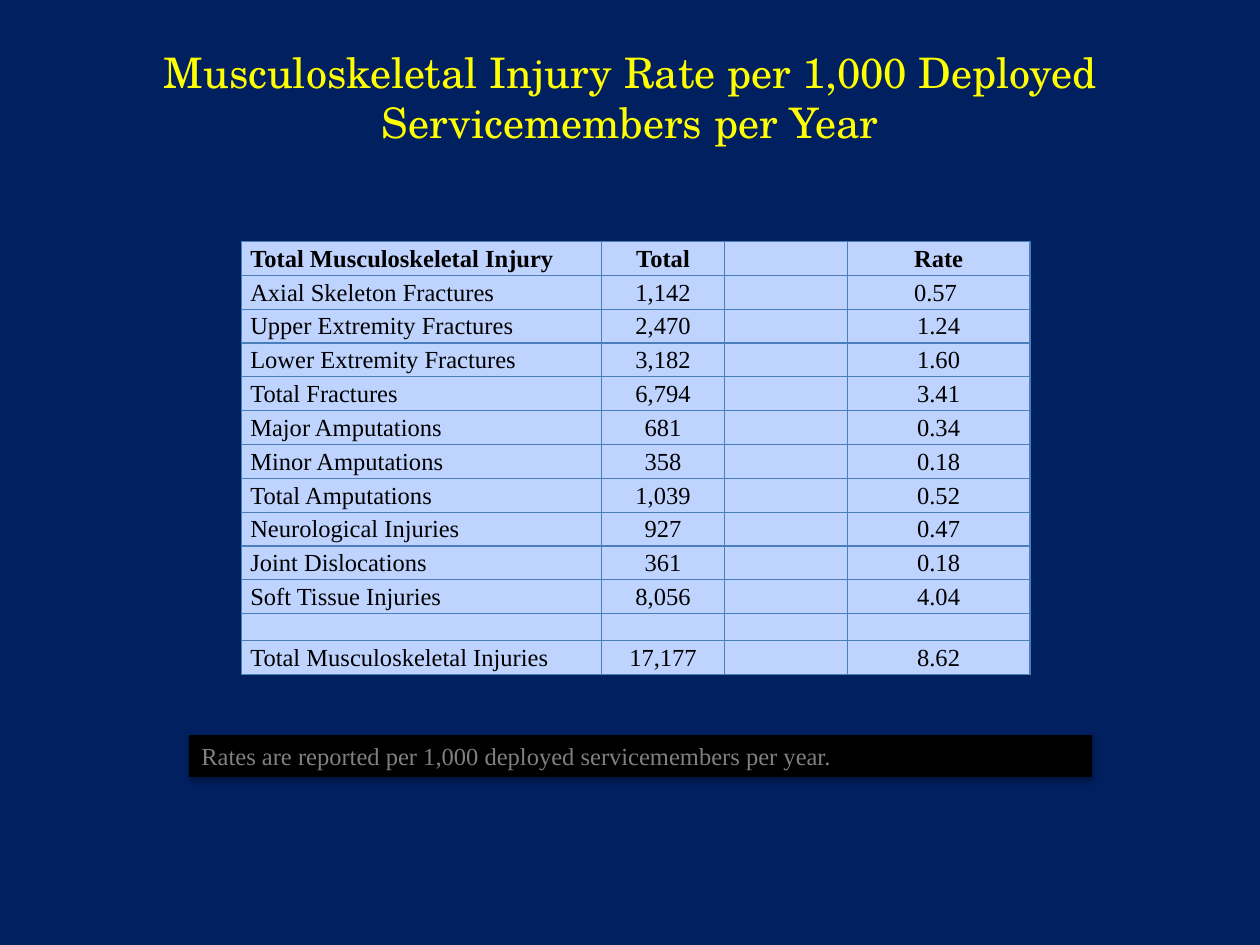
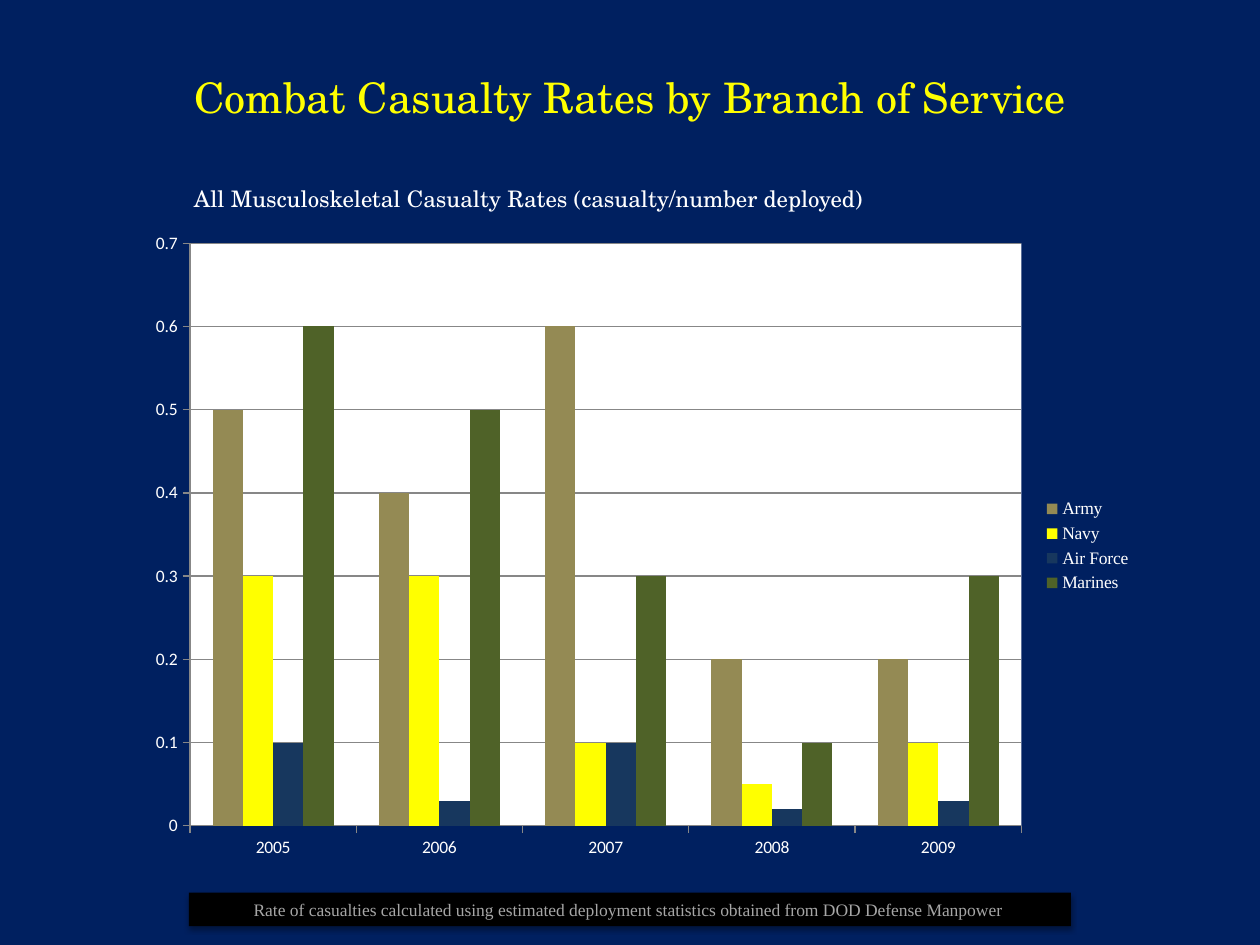
from lxml import etree
from pptx import Presentation
from pptx.chart.data import CategoryChartData as ChartData
from pptx.dml.color import RGBColor as RGB
from pptx.enum.chart import XL_CHART_TYPE as Kind, XL_LEGEND_POSITION as Side
from pptx.enum.chart import XL_TICK_MARK as Tick
from pptx.enum.shapes import MSO_SHAPE as Shape
from pptx.enum.text import MSO_ANCHOR as Anchor, PP_ALIGN as Align
from pptx.oxml import parse_xml
from pptx.oxml.ns import nsdecls, qn
from pptx.util import Inches, Pt

# Shared look
NAVY = RGB(0x00, 0x20, 0x60)
YELLOW = RGB(0xFF, 0xFF, 0x00)
WHITE = RGB(0xFF, 0xFF, 0xFF)
BLACK = RGB(0x00, 0x00, 0x00)
GREY = RGB(0x80, 0x80, 0x80)
SILVER = RGB(0xA6, 0xA6, 0xA6)
RULE = RGB(0x87, 0x87, 0x87)
PALE = RGB(0xBF, 0xD3, 0xFF)
EDGE = RGB(0x4B, 0x7E, 0xBC)
TAN = RGB(0x94, 0x8A, 0x54)
STEEL = RGB(0x17, 0x37, 0x5E)
OLIVE = RGB(0x4F, 0x62, 0x28)
HEAD, SERIF, SANS = "TeX Gyre Schola", "Times New Roman", "Calibri"

# Table content
RATES = [
    ("Total Musculoskeletal Injury", "Total", "", "Rate"),
    ("Axial Skeleton Fractures", "1,142", "", "0.57 "),
    ("Upper Extremity Fractures", "2,470", "", "1.24"),
    ("Lower Extremity Fractures", "3,182", "", "1.60"),
    ("Total Fractures", "6,794", "", "3.41"),
    ("Major Amputations", "681", "", "0.34"),
    ("Minor Amputations", "358", "", "0.18"),
    ("Total Amputations", "1,039", "", "0.52"),
    ("Neurological Injuries", "927", "", "0.47"),
    ("Joint Dislocations", "361", "", "0.18"),
    ("Soft Tissue Injuries", "8,056", "", "4.04"),
    ("", "", "", ""),
    ("Total Musculoskeletal Injuries", "17,177", "", "8.62"),
]
WIDTHS = (34.3, 11.7, 11.7, 17.4)
ROW, GAP = 2.97, 2.58

# Chart content
YEARS = ["2005", "2006", "2007", "2008", "2009"]
FORCES = [
    ("Army", TAN, (0.5, 0.4, 0.6, 0.2, 0.2)),
    ("Navy", YELLOW, (0.3, 0.3, 0.1, 0.05, 0.1)),
    ("Air Force", STEEL, (0.1, 0.03, 0.1, 0.02, 0.03)),
    ("Marines", OLIVE, (0.6, 0.5, 0.3, 0.1, 0.3)),
]
PLOT = {"x": 0.053, "y": 0.035, "w": 0.825, "h": 0.895}


def grid(*units):
    """Lengths on a grid of 120 columns by 90 rows."""
    return [Inches(unit / 12) for unit in units]


def style(font, face, size, color, bold=False):
    font.name, font.size, font.bold = face, Pt(size), bold
    font.color.rgb = color


def write(frame, text, face, size, color, align=Align.CENTER):
    frame.word_wrap = True
    frame.text = text
    para = frame.paragraphs[0]
    para.alignment = align
    style(para.runs[0].font, face, size, color)
    return para


def add_page(deck, title):
    page = deck.slides.add_slide(deck.slide_layouts[6])
    fill = page.background.fill
    fill.solid()
    fill.fore_color.rgb = NAVY
    frame = page.shapes.add_textbox(*grid(11, 5, 98, 8.4)).text_frame
    frame.vertical_anchor = Anchor.MIDDLE
    write(frame, title, HEAD, 24, YELLOW)
    return page


def add_note(page, box, text, size, color, align):
    """Black band with a soft shadow below it."""
    band = page.shapes.add_shape(Shape.RECTANGLE, *grid(*box))
    band.fill.solid()
    band.fill.fore_color.rgb = BLACK
    band.line.fill.background()
    band.shadow.inherit = False
    glow = band._element.spPr.find(qn("a:effectLst"))
    glow.append(parse_xml(
        f'<a:outerShdw {nsdecls("a")} blurRad="{Pt(3.1)}" dist="{Pt(1.8)}" '
        'dir="5400000" rotWithShape="0"><a:srgbClr val="000000">'
        '<a:alpha val="35000"/></a:srgbClr></a:outerShdw>'))
    band.text_frame.vertical_anchor = Anchor.MIDDLE
    write(band.text_frame, text, SERIF, size, color, align)


def add_lead(page, text):
    frame = page.shapes.add_textbox(*grid(11, 17, 74, 5)).text_frame
    para = write(frame, text, HEAD, 13, WHITE)
    para._p.get_or_add_pPr().set("marL", str(Inches(0.38)))


def edge_cell(cell):
    props = cell._tc.get_or_add_tcPr()
    for spot, side in enumerate(("lnL", "lnR", "lnT", "lnB")):
        props.insert(spot, parse_xml(
            f'<a:{side} {nsdecls("a")} w="{Pt(0.75)}"><a:solidFill>'
            f'<a:srgbClr val="{EDGE}"/></a:solidFill></a:{side}>'))


def fill_cell(cell, text, align, bold):
    cell.margin_left = cell.margin_right = Inches(0.07)
    cell.margin_top = cell.margin_bottom = 0
    cell.fill.solid()
    cell.fill.fore_color.rgb = PALE
    edge_cell(cell)
    para = cell.text_frame.paragraphs[0]
    if text:
        para.text = text
        para.alignment, para.line_spacing = align, 1.15
        style(para.runs[0].font, SERIF, 14, BLACK, bold)
    else:
        etree.SubElement(para._p, qn("a:endParaRPr"), sz="800")


def add_rates(page):
    high = [ROW if row[0] else GAP for row in RATES]
    box = grid(23, 23, sum(WIDTHS), sum(high))
    table = page.shapes.add_table(len(RATES), len(WIDTHS), *box).table
    for col, width in zip(table.columns, grid(*WIDTHS)):
        col.width = width
    for row, height in zip(table.rows, grid(*high)):
        row.height = height
    for r, row in enumerate(RATES):
        for c, text in enumerate(row):
            align = Align.CENTER if c else Align.LEFT
            fill_cell(table.cell(r, c), text, align, r == 0)


def set_plot(chart):
    """Place the inner plot area and paint it white."""
    area = chart._chartSpace.chart.plotArea
    for old in area.findall(qn("c:layout")):
        area.remove(old)
    spots = "".join(f'<c:{key} val="{share}"/>' for key, share in PLOT.items())
    area.insert(0, parse_xml(
        f'<c:layout {nsdecls("c")}><c:manualLayout><c:layoutTarget val="inner"/>'
        f'<c:xMode val="edge"/><c:yMode val="edge"/>{spots}'
        '</c:manualLayout></c:layout>'))
    area.append(parse_xml(
        f'<c:spPr {nsdecls("c", "a")}><a:solidFill>'
        f'<a:srgbClr val="{WHITE}"/></a:solidFill></c:spPr>'))


def add_bars(page):
    data = ChartData()
    data.categories = YEARS
    for name, _, vals in FORCES:
        data.add_series(name, vals)
    chart = page.shapes.add_chart(
        Kind.COLUMN_CLUSTERED, *grid(13, 21, 96, 62), data).chart
    chart.has_title = False
    style(chart.font, SANS, 10, WHITE)
    set_plot(chart)

    # Bars
    plot = chart.plots[0]
    plot.gap_width, plot.overlap, plot.vary_by_categories = 150, 0, False
    for bar, (_, color, _) in zip(plot.series, FORCES):
        bar.format.fill.solid()
        bar.format.fill.fore_color.rgb = color
        bar.invert_if_negative = False

    # Axes and legend
    scale = chart.value_axis
    scale.minimum_scale, scale.maximum_scale, scale.major_unit = 0, 0.7, 0.1
    scale.has_major_gridlines = True
    for axis in (chart.category_axis, scale):
        axis.major_tick_mark = Tick.OUTSIDE
    for part in (chart.category_axis, scale, scale.major_gridlines):
        part.format.line.color.rgb = RULE
        part.format.line.width = Pt(0.75)
    chart.has_legend = True
    chart.legend.position = Side.RIGHT
    chart.legend.include_in_layout = False
    style(chart.legend.font, SERIF, 10, WHITE)


def main():
    deck = Presentation()
    deck.slide_width, deck.slide_height = grid(120, 90)

    # Injury rates
    page = add_page(deck, "Musculoskeletal Injury Rate per 1,000 Deployed "
                          "Servicemembers per Year")
    add_note(page, (18, 70, 86, 4),
             "Rates are reported per 1,000 deployed servicemembers per year.",
             14, GREY, Align.LEFT)
    add_rates(page)

    # Rates by branch
    page = add_page(deck, "Combat Casualty Rates by Branch of Service")
    add_lead(page, "All Musculoskeletal Casualty Rates "
                   "(casualty/number deployed)")
    add_note(page, (18, 85, 84, 3.2),
             "Rate of casualties calculated using estimated deployment "
             "statistics obtained from DOD Defense Manpower ",
             10, SILVER, Align.CENTER)
    add_bars(page)
    deck.save("out.pptx")


if __name__ == "__main__":
    main()
